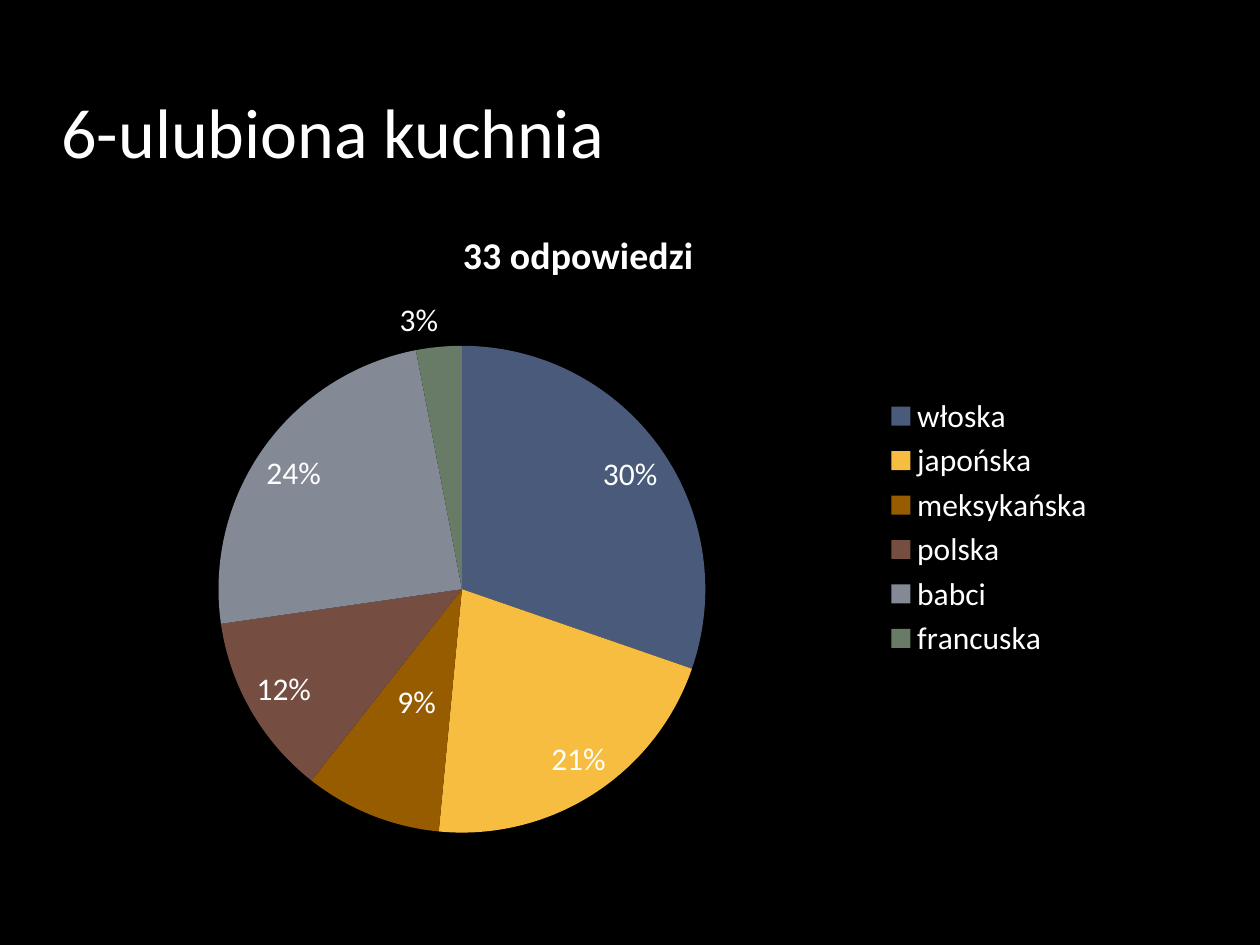
from dataclasses import dataclass

from pptx import Presentation
from pptx import util as u
from pptx.chart.data import CategoryChartData
from pptx.dml.color import RGBColor
from pptx.enum import chart as kinds, text
from pptx.oxml import parse_xml
from pptx.oxml.ns import nsdecls, qn


@dataclass(frozen=True)
class Theme:
    """Hold the colours, face and type sizes."""
    back: str = "000000"
    ink: str = "FFFFFF"
    face: str = "Calibri"
    head: float = 40
    sub: float = 21.6
    body: float = 18


THEME = Theme()
MEALS = (
    ("włoska", 30, "4A5A7A"),
    ("japońska", 21, "F7BD40"),
    ("meksykańska", 9, "975C00"),
    ("polska", 12, "754D41"),
    ("babci", 24, "838995"),
    ("francuska", 3, "687B66"),
)


def put(item, **vals):
    """Set each named value on the item."""
    for key, val in vals.items():
        setattr(item, key, val)


def style(font, size, bold=False):
    """Give a font the theme's face and ink."""
    put(font, name=THEME.face, size=u.Pt(size), bold=bold)
    font.color.rgb = RGBColor.from_string(THEME.ink)


def paint(fill, tone):
    """Fill with one solid colour."""
    fill.solid()
    fill.fore_color.rgb = RGBColor.from_string(tone)


def scale(deck, box):
    """Turn shares of the slide into lengths."""
    sides = (deck.slide_width, deck.slide_height) * 2
    return [int(part * side) for part, side in zip(box, sides)]


def head(slide, box, words):
    """Place the heading at the foot of its box."""
    frame = slide.shapes.add_textbox(*box).text_frame
    put(frame, word_wrap=True, vertical_anchor=text.MSO_ANCHOR.BOTTOM)
    para = frame.paragraphs[0]
    put(para, text=words, space_before=u.Pt(4))
    style(para.runs[0].font, THEME.head)


def fix_plot(chart, x, y, w, h):
    """Pin the inner plot to shares of the chart box."""
    area = chart.plots[0]._element.getparent()
    for old in area.findall(qn("c:layout")):
        area.remove(old)
    sizes = "".join(f'<c:{key} val="{val}"/>'
                    for key, val in zip("xywh", (x, y, w, h)))
    area.insert(0, parse_xml(
        f'<c:layout {nsdecls("c")}><c:manualLayout>'
        '<c:layoutTarget val="inner"/><c:xMode val="edge"/>'
        f'<c:yMode val="edge"/>{sizes}</c:manualLayout></c:layout>'))


def mark(series, inner):
    """Show percentages, with one label at mid slice."""
    tags = series.data_labels
    put(tags, show_value=False, show_percentage=True, number_format="0%",
        number_format_is_linked=False,
        position=kinds.XL_LABEL_POSITION.BEST_FIT)
    style(tags.font, THEME.body)
    tag = series.points[inner].data_label
    style(tag.font, THEME.body)
    tag.position = kinds.XL_LABEL_POSITION.CENTER
    node = tags._element.find(qn("c:dLbl"))
    for key, val in {"c:showVal": "0", "c:showPercent": "1"}.items():
        node.find(qn(key)).set("val", val)


def pie(slide, box, words):
    """Place the pie with its title and legend."""
    data = CategoryChartData()
    data.categories = [name for name, _, _ in MEALS]
    data.add_series("Series 1", [count for _, count, _ in MEALS])
    chart = slide.shapes.add_chart(
        kinds.XL_CHART_TYPE.PIE, *box, data).chart
    put(chart, has_title=True, has_legend=True)
    style(chart.font, THEME.body)
    frame = chart.chart_title.text_frame
    frame.text = words
    style(frame.paragraphs[0].runs[0].font, THEME.sub, True)
    put(chart.legend, position=kinds.XL_LEGEND_POSITION.RIGHT,
        include_in_layout=False)
    style(chart.legend.font, THEME.body)
    plot = chart.plots[0]
    plot.vary_by_categories = True
    series = plot.series[0]
    for spot, (_, _, tone) in enumerate(MEALS):
        paint(series.points[spot].format.fill, tone)
    mark(series, 2)
    fix_plot(chart, 0.16, 0.22, 0.46, 0.75)


def main():
    """Build and save the slide."""
    deck = Presentation()
    put(deck, slide_width=u.Inches(10), slide_height=u.Inches(7.5))
    slide = deck.slides.add_slide(deck.slide_layouts[6])
    paint(slide.background.fill, THEME.back)
    pie(slide, scale(deck, (0.039, 0.213, 0.84, 0.69)), "33 odpowiedzi")
    head(slide, scale(deck, (0.039, 0.033, 0.84, 0.156)), "6-ulubiona kuchnia")
    deck.save("out.pptx")


if __name__ == "__main__":
    main()
